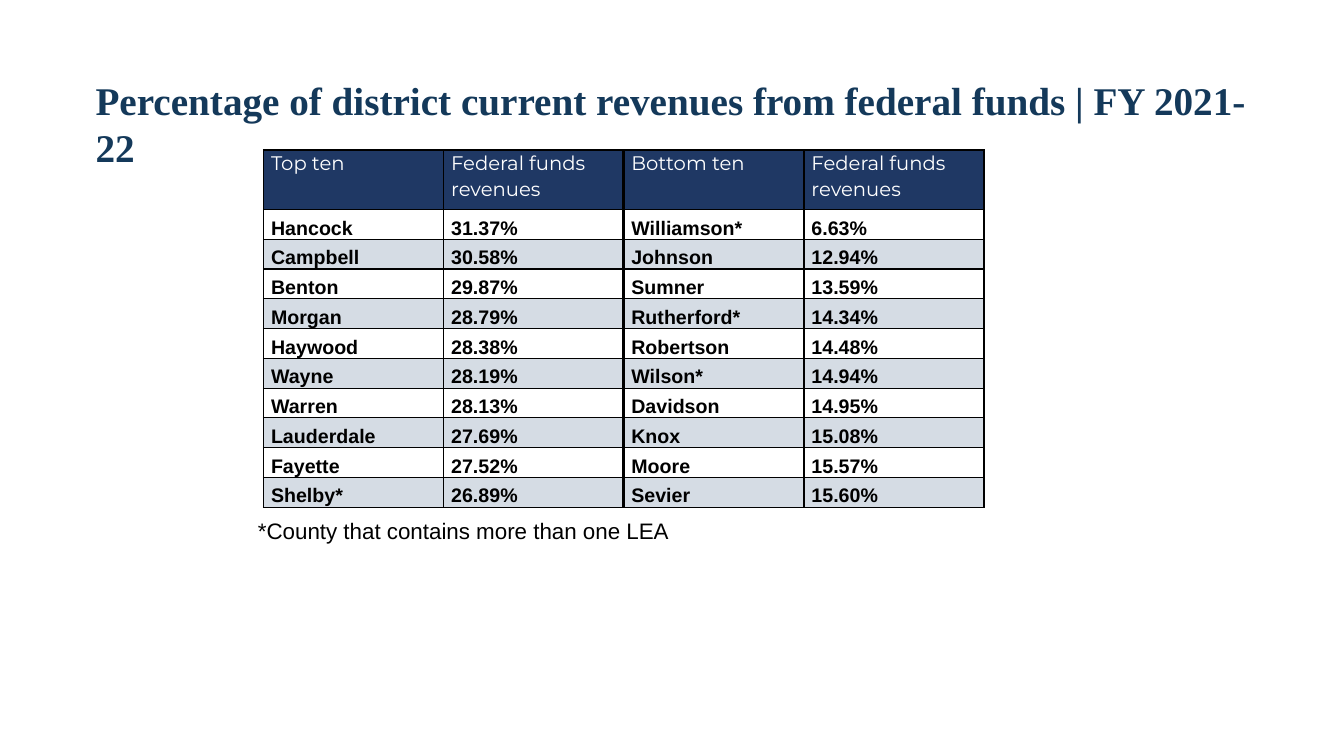
import pptx
import pptx.dml.color
import pptx.enum.text
import pptx.oxml
import pptx.oxml.ns
import pptx.util

Cm = pptx.util.Cm
Pt = pptx.util.Pt
RGBColor = pptx.dml.color.RGBColor
Anchor = pptx.enum.text.MSO_ANCHOR

TITLE_BLUE = RGBColor(0x14, 0x39, 0x5A)
HEADER_BLUE = RGBColor(0x1F, 0x38, 0x64)
BAND_GREY = RGBColor(0xD5, 0xDC, 0xE4)
WHITE = RGBColor(0xFF, 0xFF, 0xFF)
BLACK = RGBColor(0, 0, 0)

TITLE = "Percentage of district current revenues from federal funds | FY 2021-22"
FOOTNOTE = "*County that contains more than one LEA"
HEADERS = ("Top ten", "Federal funds revenues", "Bottom ten", "Federal funds revenues")
DISTRICTS = [
    ("Hancock", "31.37%", "Williamson*", "6.63%"),
    ("Campbell", "30.58%", "Johnson", "12.94%"),
    ("Benton", "29.87%", "Sumner", "13.59%"),
    ("Morgan", "28.79%", "Rutherford*", "14.34%"),
    ("Haywood", "28.38%", "Robertson", "14.48%"),
    ("Wayne", "28.19%", "Wilson*", "14.94%"),
    ("Warren", "28.13%", "Davidson", "14.95%"),
    ("Lauderdale", "27.69%", "Knox", "15.08%"),
    ("Fayette", "27.52%", "Moore", "15.57%"),
    ("Shelby*", "26.89%", "Sevier", "15.60%"),
]

TITLE_FONT = {"name": "Times New Roman", "size": Pt(28), "bold": True}
HEADER_FONT = {"name": "Montserrat", "size": Pt(14), "bold": False}
DISTRICT_FONT = {"name": "Arial", "size": Pt(14), "bold": True}
FOOTNOTE_FONT = {"name": "Arial", "size": Pt(16), "bold": False}
CELL_MARGINS = {
    "margin_left": Cm(0.19), "margin_right": Cm(0.19),
    "margin_top": 0, "margin_bottom": 0,
}

COLUMN_WIDTH = Cm(4.54)
HEADER_HEIGHT = Cm(1.5)
ROW_HEIGHT = Cm(0.75)
DIVIDER_COLUMN = 2


def apply(target, values):
    for name, value in values.items():
        setattr(target, name, value)


def write(paragraph, text, font, color):
    run = paragraph.add_run()
    run.text = text
    apply(run.font, font)
    run.font.color.rgb = color


def add_text(slide, box, text, font, color):
    frame = slide.shapes.add_textbox(*(Cm(length) for length in box)).text_frame
    frame.word_wrap = True
    frame.auto_size = pptx.enum.text.MSO_AUTO_SIZE.SHAPE_TO_FIT_TEXT
    write(frame.paragraphs[0], text, font, color)


def add_borders(cell, column):
    divider_side = {DIVIDER_COLUMN - 1: "R", DIVIDER_COLUMN: "L"}.get(column)
    for side in "LRTB":
        width = Pt(2.25) if side == divider_side else Pt(1)
        cell._tc.get_or_add_tcPr().append(pptx.oxml.parse_xml(
            f'<a:ln{side} {pptx.oxml.ns.nsdecls("a")} w="{width}">'
            f'<a:solidFill><a:srgbClr val="{BLACK}"/></a:solidFill></a:ln{side}>'))


def add_table(slide):
    rows = [HEADERS] + DISTRICTS
    table = slide.shapes.add_table(
        len(rows), len(HEADERS), Cm(6.64), Cm(3.78),
        COLUMN_WIDTH * len(HEADERS), HEADER_HEIGHT + ROW_HEIGHT * len(DISTRICTS)).table
    apply(table, {"first_row": False, "horz_banding": False})
    for column in table.columns:
        column.width = COLUMN_WIDTH
    for row_index, texts in enumerate(rows):
        is_header = row_index == 0
        table.rows[row_index].height = HEADER_HEIGHT if is_header else ROW_HEIGHT
        for column_index, text in enumerate(texts):
            cell = table.cell(row_index, column_index)
            apply(cell, CELL_MARGINS)
            cell.vertical_anchor = Anchor.TOP if is_header else Anchor.BOTTOM
            add_borders(cell, column_index)
            if row_index % 2 and not is_header:
                cell.fill.background()
            else:
                cell.fill.solid()
                cell.fill.fore_color.rgb = HEADER_BLUE if is_header else BAND_GREY
            paragraph = cell.text_frame.paragraphs[0]
            paragraph.line_spacing = 1.07
            write(paragraph, text, HEADER_FONT if is_header else DISTRICT_FONT,
                  WHITE if is_header else BLACK)


def main():
    presentation = pptx.Presentation()
    apply(presentation, {"slide_width": Cm(33.87), "slide_height": Cm(19.05)})
    slide = presentation.slides.add_slide(presentation.slide_layouts[6])
    add_text(slide, (2.16, 1.8, 30.35, 1.45), TITLE, TITLE_FONT, TITLE_BLUE)
    add_table(slide)
    add_text(slide, (6.25, 12.9, 16, 0.94), FOOTNOTE, FOOTNOTE_FONT, BLACK)
    presentation.save("out.pptx")


if __name__ == "__main__":
    main()
